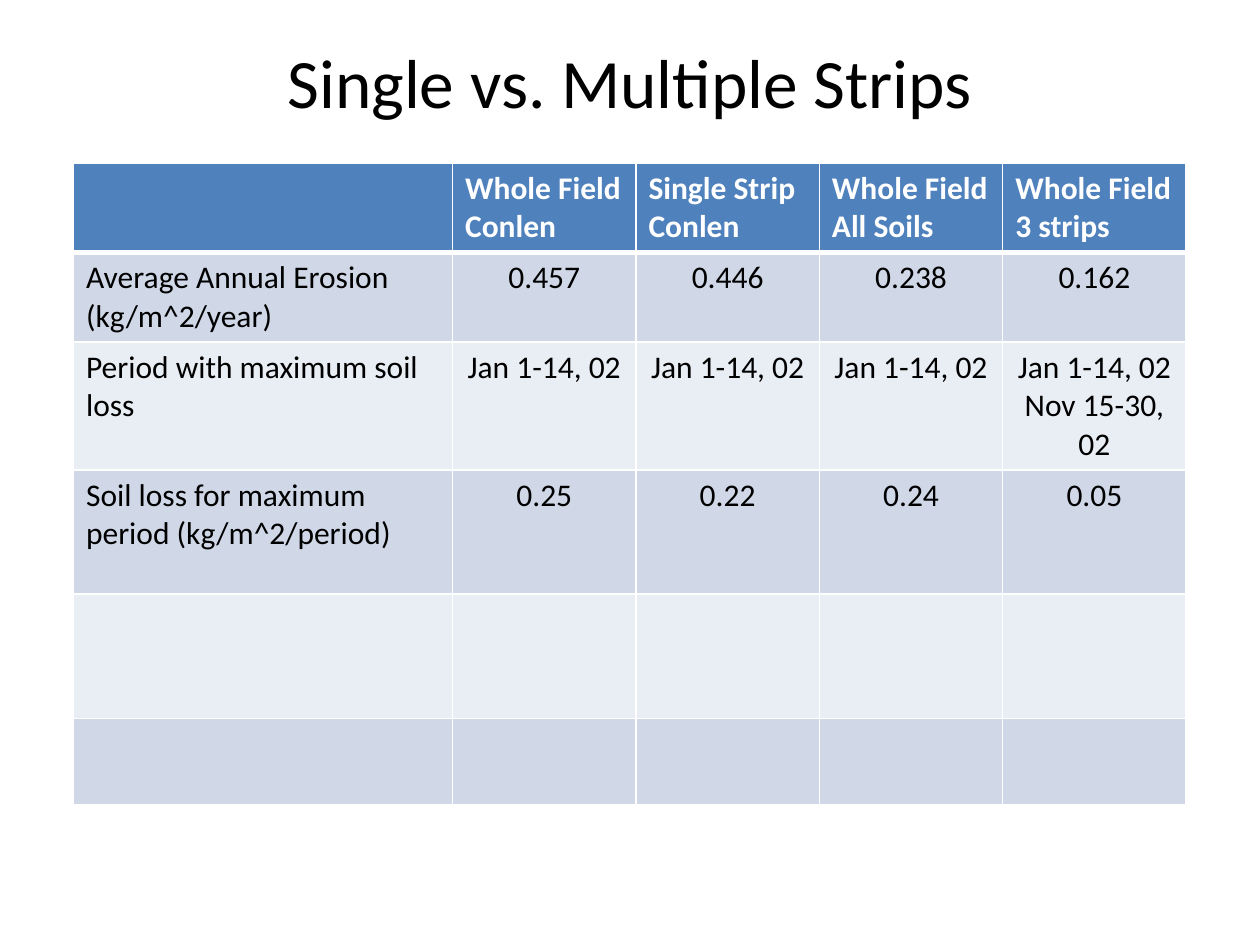
from lxml.etree import SubElement
from pptx import Presentation
from pptx.dml.color import RGBColor
from pptx.enum.text import MSO_ANCHOR, MSO_AUTO_SIZE, PP_ALIGN
from pptx.oxml.ns import qn
from pptx.util import Pt

BLACK = RGBColor(0x00, 0x00, 0x00)
WHITE = RGBColor(0xFF, 0xFF, 0xFF)
HEADER_BLUE = RGBColor(0x4F, 0x81, 0xBD)
BAND_DARK = RGBColor(0xD0, 0xD8, 0xE8)
BAND_LIGHT = RGBColor(0xE9, 0xED, 0xF4)

COLUMN_WIDTHS = [216.6] + [104.8] * 4
ROW_HEIGHTS = [51, 51, 73, 71, 71, 49.5]
EROSION_ROWS = [
    ["", "Whole Field Conlen", "Single Strip Conlen", "Whole Field All Soils", "Whole Field 3 strips"],
    ["Average Annual Erosion (kg/m^2/year)", "0.457", "0.446", "0.238", "0.162"],
    ["Period with maximum soil loss"] + ["Jan 1-14, 02"] * 3 + ["Jan 1-14, 02 Nov 15-30, 02"],
    ["Soil loss for maximum period (kg/m^2/period)", "0.25", "0.22", "0.24", "0.05"],
    [""] * 5,
    [""] * 5,
]


class StripSlide:
    font_name = "Calibri"
    title_size = 39.6
    table_size = 18

    def __init__(self, presentation):
        self.slide = presentation.slides.add_slide(presentation.slide_layouts[5])

    def add_text(self, paragraph, text, size, color, align, bold=False):
        paragraph.alignment = align
        run = paragraph.add_run()
        run.text = text
        run.font.name = self.font_name
        run.font.size = Pt(size)
        run.font.bold = bold
        run.font.color.rgb = color

    def title(self, text, left, top, width, height):
        heading = self.slide.shapes.title
        heading.left, heading.top = Pt(left), Pt(top)
        heading.width, heading.height = Pt(width), Pt(height)
        frame = heading.text_frame
        frame.word_wrap = True
        frame.auto_size = MSO_AUTO_SIZE.NONE
        frame.vertical_anchor = MSO_ANCHOR.MIDDLE
        self.add_text(frame.paragraphs[0], text, self.title_size, BLACK, PP_ALIGN.CENTER)

    def borders(self, cell, top, bottom):
        properties = cell._tc.get_or_add_tcPr()
        for side, width in (("L", 1), ("R", 1), ("T", top), ("B", bottom)):
            line = SubElement(properties, qn(f"a:ln{side}"), w=str(Pt(width)))
            SubElement(SubElement(line, qn("a:solidFill")), qn("a:srgbClr"), val=str(WHITE))

    def cell(self, cell, text, row, column):
        header = row == 0
        self.borders(cell, top=3 if row == 1 else 1, bottom=3 if header else 1)
        cell.fill.solid()
        cell.fill.fore_color.rgb = HEADER_BLUE if header else BAND_DARK if row % 2 else BAND_LIGHT
        if text:
            align = PP_ALIGN.LEFT if header or column == 0 else PP_ALIGN.CENTER
            color = WHITE if header else BLACK
            self.add_text(cell.text_frame.paragraphs[0], text, self.table_size, color, align, header)

    def table(self, rows, left, top, widths, heights):
        grid = self.slide.shapes.add_table(
            len(rows), len(widths), Pt(left), Pt(top), Pt(sum(widths)), Pt(sum(heights))
        ).table
        for column, width in zip(grid.columns, widths):
            column.width = Pt(width)
        for row, height in zip(grid.rows, heights):
            row.height = Pt(height)
        for r, texts in enumerate(rows):
            for c, text in enumerate(texts):
                self.cell(grid.cell(r, c), text, r, c)


def main():
    presentation = Presentation()
    presentation.slide_width, presentation.slide_height = Pt(720), Pt(540)
    strips = StripSlide(presentation)
    strips.title("Single vs. Multiple Strips", 36, 18, 648, 56)
    strips.table(EROSION_ROWS, 42, 93, COLUMN_WIDTHS, ROW_HEIGHTS)
    presentation.save("out.pptx")


if __name__ == "__main__":
    main()
